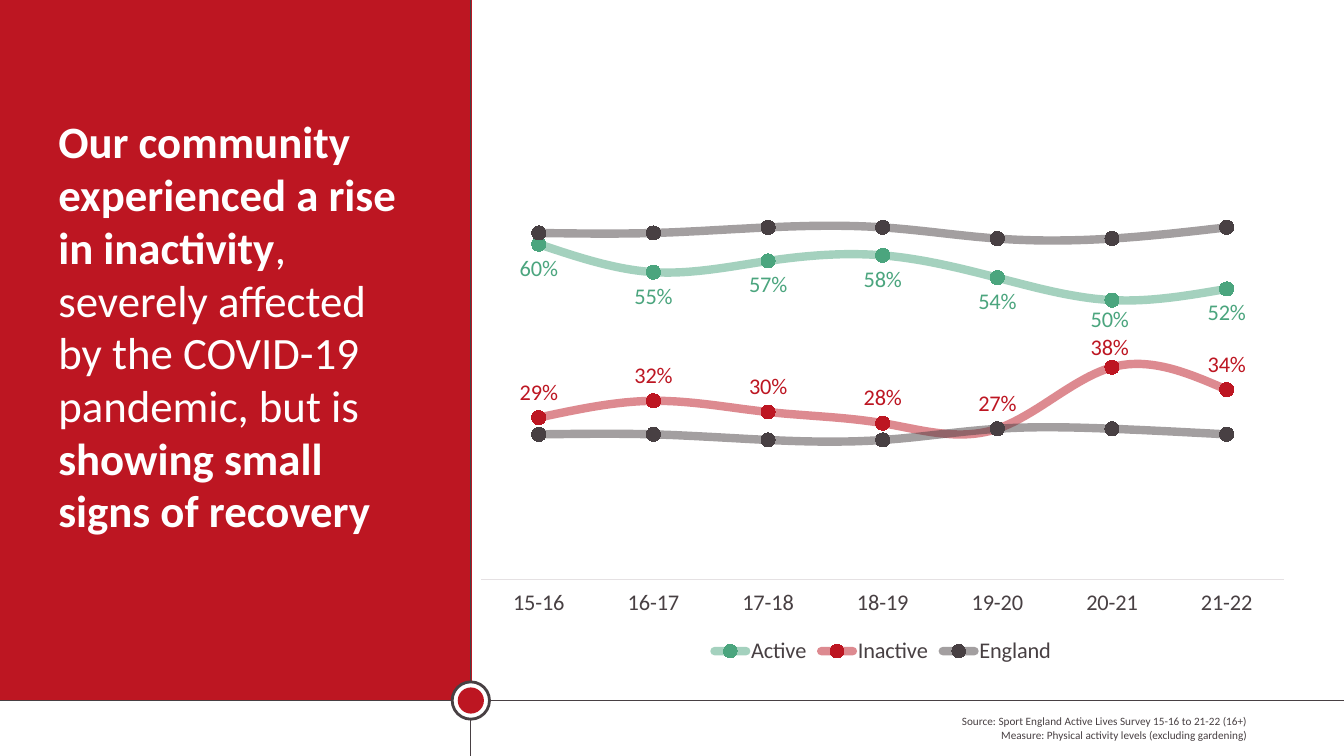
from dataclasses import dataclass
from typing import Optional

from lxml import etree
from pptx import Presentation
from pptx.chart.data import CategoryChartData
from pptx.dml.color import RGBColor
from pptx.enum.chart import (XL_CHART_TYPE, XL_LABEL_POSITION, XL_LEGEND_POSITION,
                             XL_MARKER_STYLE, XL_TICK_LABEL_POSITION, XL_TICK_MARK)
from pptx.enum.shapes import MSO_CONNECTOR, MSO_SHAPE
from pptx.enum.text import PP_ALIGN
from pptx.oxml.ns import qn
from pptx.util import Inches, Pt

RECT, OVAL = MSO_SHAPE.RECTANGLE, MSO_SHAPE.OVAL
ABOVE, BELOW = XL_LABEL_POSITION.ABOVE, XL_LABEL_POSITION.BELOW
NO_TICK = XL_TICK_MARK.NONE


@dataclass(frozen=True)
class Theme:
    font: str = "Calibri"
    red: RGBColor = RGBColor(0xBD, 0x16, 0x22)
    green: RGBColor = RGBColor(0x4B, 0xA5, 0x7E)
    dark: RGBColor = RGBColor(0x48, 0x40, 0x43)
    pale: RGBColor = RGBColor(0xE5, 0xE1, 0xE3)
    white: RGBColor = RGBColor(0xFF, 0xFF, 0xFF)
    headline: int = 32
    chart: int = 16
    source: int = 8


@dataclass(frozen=True)
class Trend:
    name: str
    values: tuple
    color: RGBColor
    label_position: Optional[XL_LABEL_POSITION] = None
    nudge_y: float = 0  # shift of the 20-21 label, as a share of chart height


THEME = Theme()
WIDTH, HEIGHT = 13.33, 7.5
RULE_X, RULE_Y = 4.67, 6.95
YEARS = [f"{year}-{year + 1}" for year in range(15, 22)]
NUDGED_YEAR = YEARS.index("20-21")
NUDGE_X = -0.003
TRENDS = [
    Trend("Active", (0.6, 0.55, 0.57, 0.58, 0.54, 0.5, 0.52), THEME.green, BELOW, -0.01),
    Trend("Inactive", (0.29, 0.32, 0.3, 0.28, 0.27, 0.38, 0.34), THEME.red, ABOVE, 0.01),
    Trend("England", (0.26, 0.26, 0.25, 0.25, 0.27, 0.27, 0.26), THEME.dark),
    Trend("Series 4", (0.62, 0.62, 0.63, 0.63, 0.61, 0.61, 0.63), THEME.dark),
]
HEADLINE = [
    ("Our community experienced a rise in inactivity", True),
    (", severely affected by the COVID-19 pandemic, but is ", False),
    ("showing small signs of recovery", True),
]
SOURCE = ["Source: Sport England Active Lives Survey 15-16 to 21-22 (16+)",
          "Measure: Physical activity levels (excluding gardening)"]


def style_font(font, size: int, color: RGBColor) -> None:
    font.name, font.size = THEME.font, Pt(size)
    font.color.rgb = color


def add_block(slide, kind, left: float, top: float, width: float, height: float,
              fill: RGBColor, outline: Optional[RGBColor] = None) -> None:
    block = slide.shapes.add_shape(kind, Inches(left), Inches(top),
                                   Inches(width), Inches(height))
    block.shadow.inherit = False
    block.fill.solid()
    block.fill.fore_color.rgb = fill
    if outline is None:
        block.line.fill.background()
    else:
        block.line.color.rgb = outline
        block.line.width = Pt(2)


def add_rule(slide, x1: float, y1: float, x2: float, y2: float) -> None:
    rule = slide.shapes.add_connector(MSO_CONNECTOR.STRAIGHT, Inches(x1), Inches(y1),
                                      Inches(x2), Inches(y2))
    rule.line.color.rgb = THEME.dark
    rule.line.width = Pt(0.5)
    etree.SubElement(rule._element.spPr, qn("a:effectLst"))


def add_text_frame(slide, left: float, top: float, width: float, height: float):
    frame = slide.shapes.add_textbox(Inches(left), Inches(top),
                                     Inches(width), Inches(height)).text_frame
    frame.word_wrap = True
    return frame


def manual_layout(**settings):
    layout = etree.Element(qn("c:layout"))
    manual = etree.SubElement(layout, qn("c:manualLayout"))
    for tag, value in settings.items():
        etree.SubElement(manual, qn(f"c:{tag}")).set("val", str(value))
    return layout


def style_trend(series, trend: Trend) -> None:
    series.smooth = True
    line = series.format.line
    line.width = Pt(6)
    line.color.rgb = trend.color
    rgb = next(line._ln.iter(qn("a:srgbClr")))
    etree.SubElement(rgb, qn("a:alpha")).set("val", "50000")
    line._ln.set("cap", "rnd")

    marker = series.marker
    marker.style, marker.size = XL_MARKER_STYLE.CIRCLE, 10
    marker.format.fill.solid()
    marker.format.fill.fore_color.rgb = trend.color
    marker.format.line.fill.background()

    if trend.label_position is None:
        return
    labels = series.data_labels
    labels.show_value = True
    labels.number_format, labels.number_format_is_linked = "0%", False
    labels.position = trend.label_position
    style_font(labels.font, THEME.chart, trend.color)

    # The two 20-21 labels sit close together, so each is shifted a little
    nudged = series.points[NUDGED_YEAR].data_label
    nudged.position = trend.label_position
    style_font(nudged.font, THEME.chart, trend.color)
    index = next(labels._element.iter(qn("c:dLbl"))).find(qn("c:idx"))
    index.addnext(manual_layout(x=NUDGE_X, y=trend.nudge_y))


def add_trend_chart(slide) -> None:
    data = CategoryChartData(number_format="0%")
    data.categories = YEARS
    for trend in TRENDS:
        data.add_series(trend.name, trend.values)
    chart = slide.shapes.add_chart(XL_CHART_TYPE.LINE_MARKERS, Inches(4.77), Inches(1.55),
                                   Inches(7.97), Inches(5.09), data).chart
    chart.has_title = False
    style_font(chart.font, THEME.chart, THEME.dark)

    # Axes
    years, share = chart.category_axis, chart.value_axis
    years.major_tick_mark = years.minor_tick_mark = NO_TICK
    years.tick_label_position = XL_TICK_LABEL_POSITION.LOW
    years.format.line.color.rgb = THEME.pale
    years.format.line.width = Pt(0.75)
    style_font(years.tick_labels.font, THEME.chart, THEME.dark)
    share.minimum_scale, share.maximum_scale = 0, 0.75
    share.has_major_gridlines = False
    share.visible = False

    # Legend, without the second England line
    chart.has_legend = True
    legend = chart.legend
    legend.position = XL_LEGEND_POSITION.BOTTOM
    legend.include_in_layout = False
    style_font(legend.font, THEME.chart, THEME.dark)
    entry = etree.Element(qn("c:legendEntry"))
    etree.SubElement(entry, qn("c:idx")).set("val", str(len(TRENDS) - 1))
    etree.SubElement(entry, qn("c:delete")).set("val", "1")
    legend._element.find(qn("c:legendPos")).addnext(entry)

    # Plot area and lines
    plot_area = chart._chartSpace.chart.plotArea
    for old in plot_area.findall(qn("c:layout")):
        plot_area.remove(old)
    plot_area.insert(0, manual_layout(layoutTarget="inner", xMode="edge", yMode="edge",
                                      x=0, y=0.008, w=1, h=0.818))
    chart.plots[0].vary_by_categories = False
    for series, trend in zip(chart.plots[0].series, TRENDS):
        style_trend(series, trend)


def main() -> None:
    deck = Presentation()
    deck.slide_width, deck.slide_height = Inches(WIDTH), Inches(HEIGHT)
    slide = deck.slides.add_slide(deck.slide_layouts[6])

    # Red panel, crossing rules and the badge where they meet
    add_block(slide, RECT, 0, 0, 4.68, RULE_Y, THEME.red)
    add_rule(slide, RULE_X, 0, RULE_X, HEIGHT)
    add_rule(slide, 0, RULE_Y, WIDTH, RULE_Y)
    for size, fill, outline in ((0.37, THEME.white, THEME.dark), (0.26, THEME.red, None)):
        add_block(slide, OVAL, RULE_X - size / 2, RULE_Y - size / 2, size, size, fill, outline)

    # Source note
    note = add_text_frame(slide, 6, 7.04, 6.47, 0.37)
    for number, text in enumerate(SOURCE):
        paragraph = note.add_paragraph() if number else note.paragraphs[0]
        paragraph.text = text
        paragraph.alignment = PP_ALIGN.RIGHT
        style_font(paragraph.font, THEME.source, THEME.dark)

    # Headline
    message = add_text_frame(slide, 0.48, 1.11, 3.72, 3.39).paragraphs[0]
    message.line_spacing = 0.98
    style_font(message.font, THEME.headline, THEME.white)
    for text, bold in HEADLINE:
        run = message.add_run()
        run.text, run.font.bold = text, bold

    add_trend_chart(slide)
    deck.save("out.pptx")


if __name__ == "__main__":
    main()
